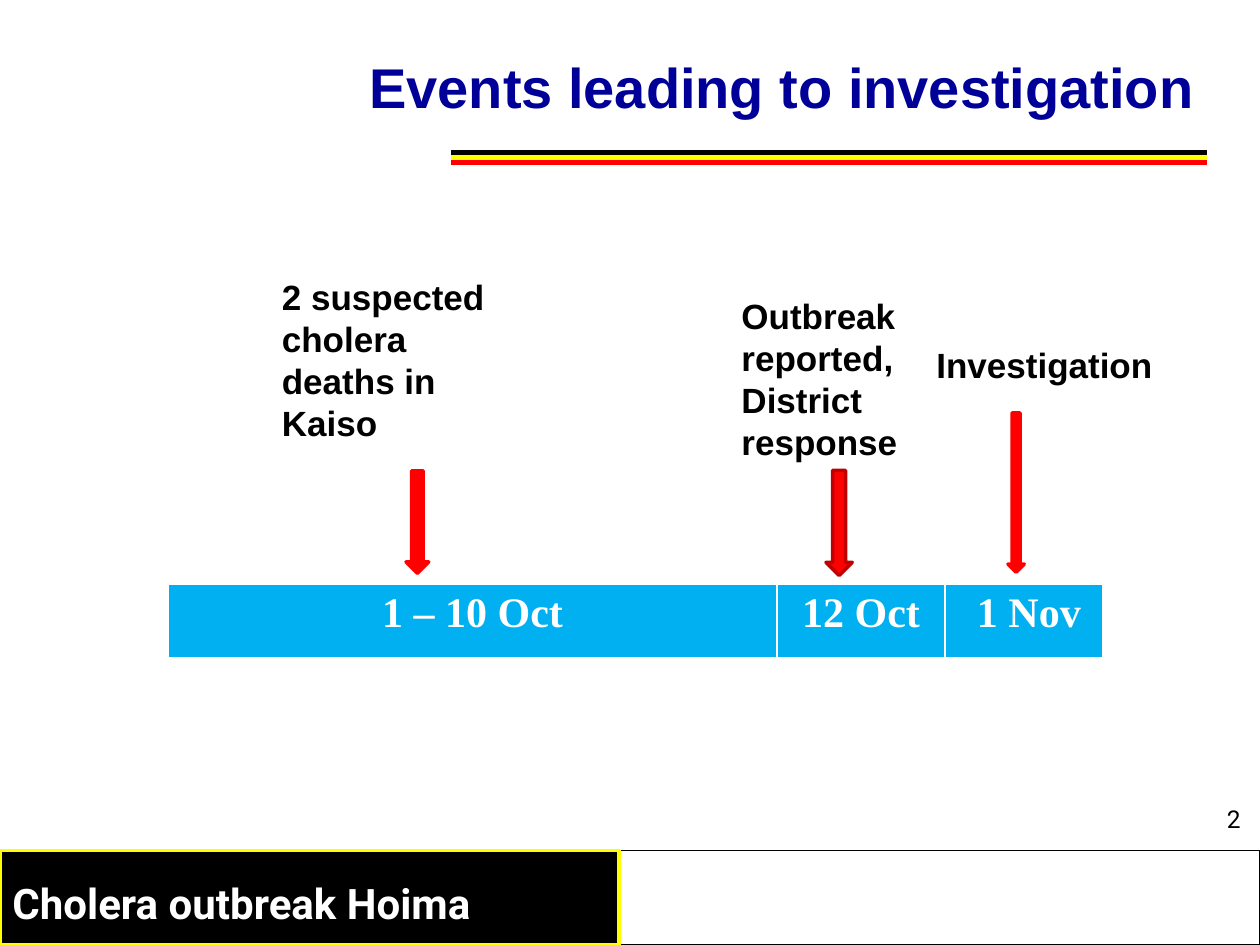
from lxml.etree import SubElement
from pptx import Presentation
from pptx.dml.color import RGBColor
from pptx.enum.shapes import MSO_CONNECTOR, MSO_SHAPE
from pptx.enum.text import MSO_ANCHOR, PP_ALIGN
from pptx.oxml.ns import qn
from pptx.util import Pt

COLORS = {
    "black": "000000", "white": "FFFFFF", "yellow": "FFFF00", "red": "FF0000",
    "dark red": "C00000", "navy": "000099", "sky": "00B0F0",
}


def color(name):
    return RGBColor.from_string(COLORS[name])


def points(box):
    return [Pt(length) for length in box]


def style_para(para, font, size, ink, bold=True, align=PP_ALIGN.LEFT):
    para.alignment = align
    para.font.name = font
    para.font.size = Pt(size)
    para.font.bold = bold
    para.font.color.rgb = color(ink)


def add_text(shapes, box, lines, font, size, ink, **style):
    label = shapes.add_textbox(*points(box))
    frame = label.text_frame
    frame.word_wrap = True
    frame.text = "\n".join(lines)
    for para in frame.paragraphs:
        style_para(para, font, size, ink, **style)


def add_outlined(shapes, kind, box, fill, line, weight):
    shape = shapes.add_shape(kind, *points(box))
    shape.shadow.inherit = False
    if fill:
        shape.fill.solid()
        shape.fill.fore_color.rgb = color(fill)
    else:
        shape.fill.background()
    shape.line.color.rgb = color(line)
    shape.line.width = Pt(weight)


def add_heading(page, box, text):
    title = page.shapes.title
    title.left, title.top, title.width, title.height = points(box)
    frame = title.text_frame
    frame.word_wrap = True
    frame.vertical_anchor = MSO_ANCHOR.MIDDLE
    frame.text = text
    style_para(frame.paragraphs[0], "Arial", 32, "navy", align=PP_ALIGN.RIGHT)


def add_stripes(page, left, top, width):
    """Three touching rules, each as thick as the step between them."""
    weight = 3
    for row, ink in enumerate(("black", "yellow", "red")):
        y = Pt(top + row * weight)
        rule = page.shapes.add_connector(
            MSO_CONNECTOR.STRAIGHT, Pt(left), y, Pt(left + width), y)
        rule.line.color.rgb = color(ink)
        rule.line.width = Pt(weight)
        SubElement(rule._element.spPr, qn("a:effectLst"))


def add_footer(page, box, split, text, number):
    left, top, width, height = box
    add_outlined(page.shapes, MSO_SHAPE.RECTANGLE,
                 (left + split, top, width - split, height), None, "black", 1)
    add_outlined(page.shapes, MSO_SHAPE.RECTANGLE,
                 (left, top, split, height), "black", "yellow", 2.25)
    add_text(page.shapes, (left, top + 12, split - 18, 36), [text],
             "Roboto", 24, "white")
    add_text(page.shapes, (left + width - 30, top - 30, 30, 24), [number],
             "Roboto", 14, "black", bold=False, align=PP_ALIGN.CENTER)


def add_timeline(page, box, periods):
    table = page.shapes.add_table(1, len(periods), *points(box)).table
    for index, (text, width) in enumerate(periods):
        table.columns[index].width = Pt(width)
        cell = table.cell(0, index)
        cell.fill.solid()
        cell.fill.fore_color.rgb = color("sky")
        cell.text = text
        style_para(cell.text_frame.paragraphs[0], "Times New Roman", 24,
                   "white", align=PP_ALIGN.CENTER)


def add_event(page, text_box, lines, arrow_box, outline):
    """A label grouped with the arrow that points at its date."""
    event = page.shapes.add_group_shape()
    add_text(event.shapes, text_box, lines, "Arial", 20, "black")
    add_outlined(event.shapes, MSO_SHAPE.DOWN_ARROW, arrow_box,
                 "red", outline, 2)


def main():
    deck = Presentation()
    deck.slide_width, deck.slide_height = Pt(720), Pt(540)
    page = deck.slides.add_slide(deck.slide_layouts[5])

    # Frame of the page
    add_footer(page, (0, 486, 720, 54), 354, "Cholera outbreak Hoima", "2")
    add_stripes(page, 258, 87, 432)
    add_heading(page, (30, 16, 660, 66), "Events leading to investigation")

    # Dates
    add_timeline(page, (96, 333.6, 534, 42),
                 [("1 – 10 Oct", 348), ("12 Oct", 96), (" 1 Nov", 90)])

    # Events above the dates
    events = [
        ((528, 193, 150, 38), ["Investigation"],
         (576, 236, 9.3, 91), "red"),
        ((416.6, 165, 126, 104.6), ["Outbreak reported,", "District response"],
         (472, 268.8, 15, 60), "dark red"),
        ((154, 154, 150, 104.6), ["2 suspected cholera deaths in Kaiso"],
         (232, 269, 13, 58.6), "red"),
    ]
    for event in events:
        add_event(page, *event)

    deck.save("out.pptx")


if __name__ == "__main__":
    main()
